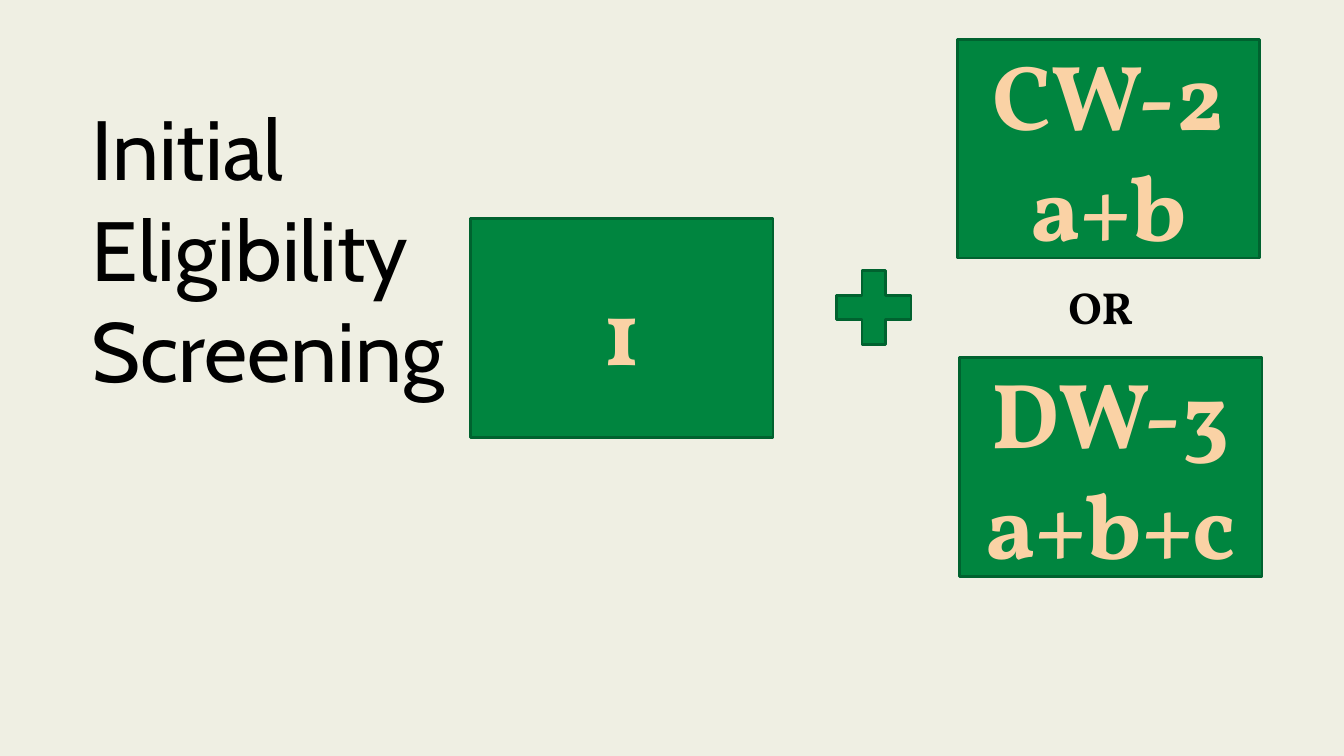
"""Build the initial eligibility screening slide."""
from dataclasses import dataclass

from pptx import Presentation
from pptx.dml.color import RGBColor
from pptx.enum.shapes import MSO_SHAPE
from pptx.enum.text import MSO_ANCHOR, PP_ALIGN
from pptx.shapes.autoshape import Shape
from pptx.slide import Slide
from pptx.util import Pt

CREAM = RGBColor(0xEF, 0xEF, 0xE3)
GREEN = RGBColor(0x00, 0x85, 0x3F)
DARK_GREEN = RGBColor(0x00, 0x62, 0x2F)
PEACH = RGBColor(0xFA, 0xD2, 0xA5)
BLACK = RGBColor(0x00, 0x00, 0x00)

CARD_WIDTH, CARD_HEIGHT = 216, 156.24
PLUS_SIZE = 72


@dataclass(frozen=True)
class Card:
    text: str
    left: float
    top: float


@dataclass(frozen=True)
class Label:
    text: str
    left: float
    top: float
    width: float
    height: float
    font: str
    size: float
    bold: bool
    anchor: MSO_ANCHOR


CARDS = (
    Card("1", 336.24, 156.24),
    Card("CW-2\va+b", 684, 28.08),
    Card("DW-3 a+b+c", 685.44, 255.6),
)
LABELS = (
    Label("Initial Eligibility Screening", 58.32, 66.24, 325.44, 221.76,
          "Cabin", 60, False, MSO_ANCHOR.MIDDLE),
    Label("OR", 756, 196.56, 91.44, 46.08, "Vollkorn", 32, True, MSO_ANCHOR.TOP),
)


def write_text(box: Shape, text: str, font: str, size: float, bold: bool,
               color: RGBColor, align: PP_ALIGN, anchor: MSO_ANCHOR) -> None:
    frame = box.text_frame
    frame.word_wrap = True
    frame.vertical_anchor = anchor
    paragraph = frame.paragraphs[0]
    paragraph.text = text
    paragraph.alignment = align
    paragraph.font.name = font
    paragraph.font.size = Pt(size)
    paragraph.font.bold = bold
    paragraph.font.color.rgb = color


def add_green_shape(page: Slide, kind: MSO_SHAPE, left: float, top: float,
                    width: float, height: float) -> Shape:
    shape = page.shapes.add_shape(kind, Pt(left), Pt(top), Pt(width), Pt(height))
    shape.shadow.inherit = False
    shape.fill.solid()
    shape.fill.fore_color.rgb = GREEN
    shape.line.color.rgb = DARK_GREEN
    shape.line.width = Pt(2)
    return shape


def add_card(page: Slide, card: Card) -> None:
    box = add_green_shape(page, MSO_SHAPE.RECTANGLE, card.left, card.top,
                          CARD_WIDTH, CARD_HEIGHT)
    write_text(box, card.text, "Vollkorn", 66, True, PEACH,
               PP_ALIGN.CENTER, MSO_ANCHOR.MIDDLE)


def add_label(page: Slide, label: Label) -> None:
    box = page.shapes.add_textbox(Pt(label.left), Pt(label.top),
                                  Pt(label.width), Pt(label.height))
    write_text(box, label.text, label.font, label.size, label.bold, BLACK,
               PP_ALIGN.LEFT, label.anchor)


def main() -> None:
    deck = Presentation()
    deck.slide_width, deck.slide_height = Pt(960), Pt(540)
    page = deck.slides.add_slide(deck.slide_layouts[6])
    page.background.fill.solid()
    page.background.fill.fore_color.rgb = CREAM
    for card in CARDS:
        add_card(page, card)
    add_green_shape(page, MSO_SHAPE.MATH_PLUS, 588.24, 183.6, PLUS_SIZE, PLUS_SIZE)
    for label in LABELS:
        add_label(page, label)
    deck.save("out.pptx")


if __name__ == "__main__":
    main()
